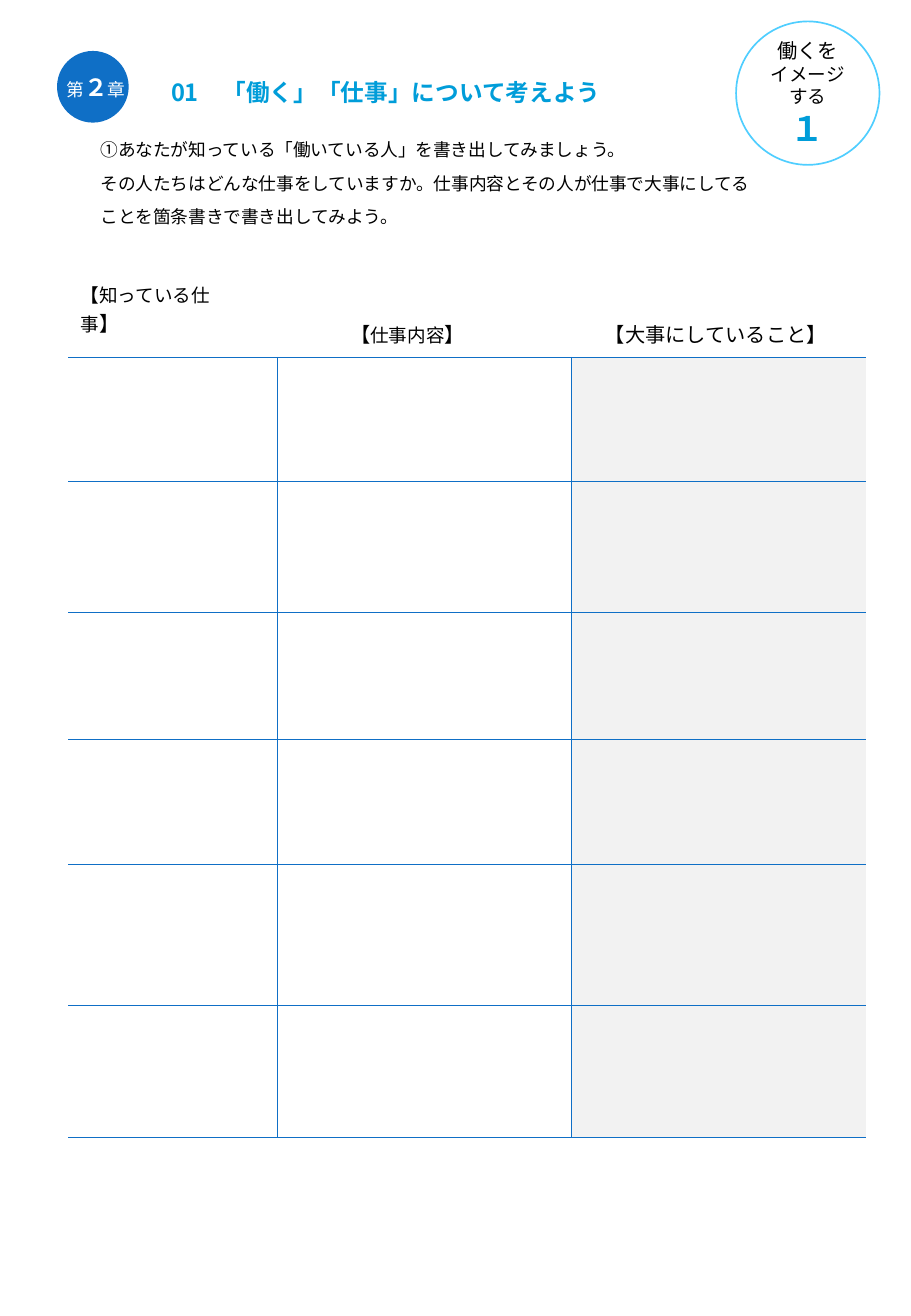
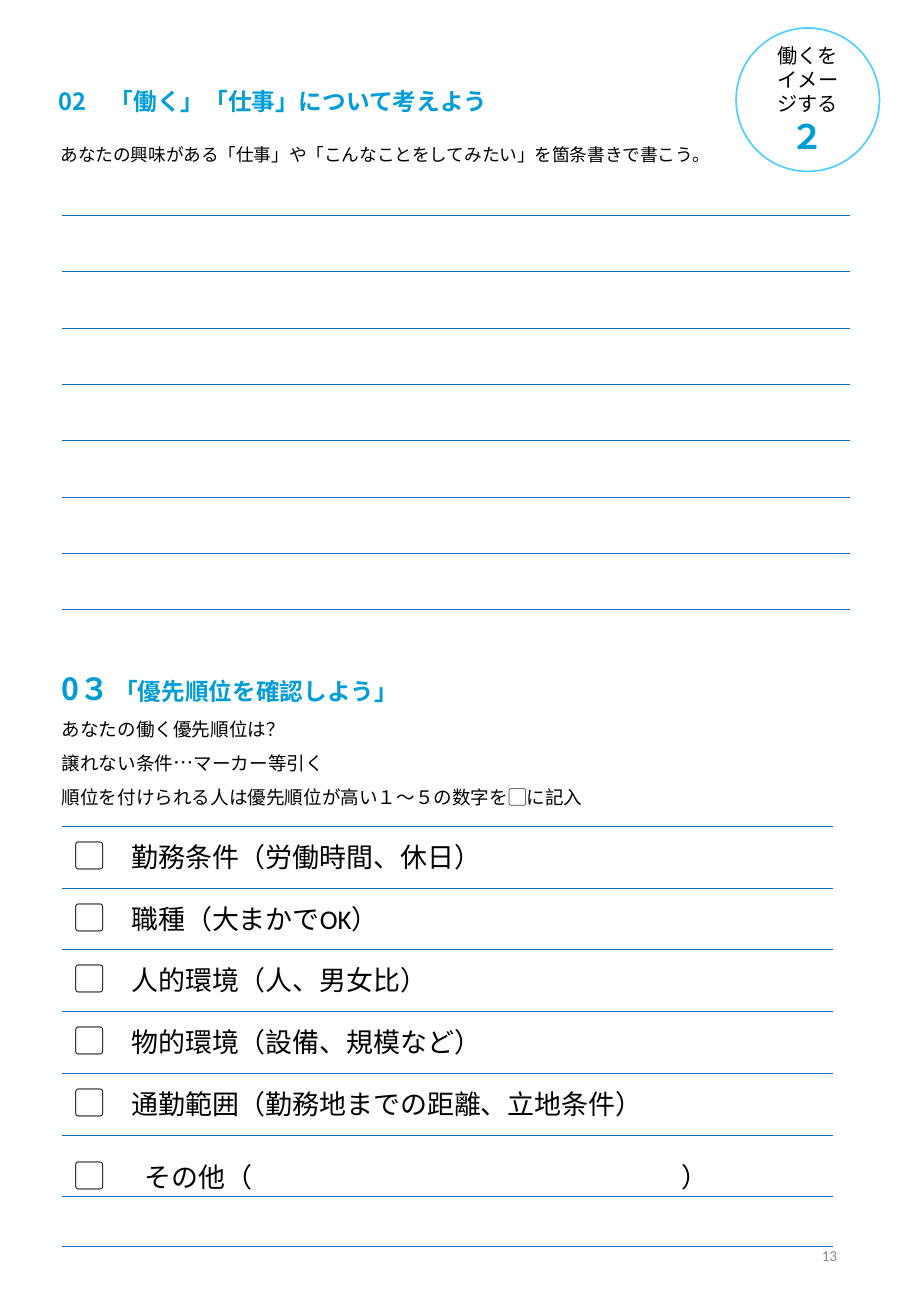
from pptx import Presentation
from pptx.dml.color import RGBColor
from pptx.enum.shapes import MSO_SHAPE
from pptx.enum.text import MSO_ANCHOR, PP_ALIGN
from pptx.oxml import parse_xml
from pptx.oxml.ns import nsdecls, qn
from pptx.util import Pt

BLUE = RGBColor(0x0F, 0x6F, 0xC6)
CYAN = RGBColor(0x00, 0x9D, 0xD9)
SKY = RGBColor(0x4F, 0xCE, 0xFF)
BLACK = RGBColor(0, 0, 0)
WHITE = RGBColor(0xFF, 0xFF, 0xFF)
PALE_GRAY = RGBColor(0xF2, 0xF2, 0xF2)
GRAY = RGBColor(0x8C, 0x8C, 0x8C)

JAPANESE_FONT = "Noto Sans CJK JP"
LATIN_FONT = "Calibri"
PLAIN_TABLE_STYLE = "{2D5ABB26-0587-4C30-8999-92F81FD0307C}"
LEADING = 20
TITLE = "「働く」「仕事」について考えよう"


def run(text, size, color=BLACK, bold=False):
    return text, size, color, bold


class Worksheet:
    def __init__(self):
        self.presentation = Presentation()
        self.presentation.slide_width = Pt(540)
        self.presentation.slide_height = Pt(780)
        self.slide = None

    def new_slide(self):
        self.slide = self.presentation.slides.add_slide(self.presentation.slide_layouts[6])

    def set_text(self, text_frame, paragraphs, leading=None, align=PP_ALIGN.LEFT, font=JAPANESE_FONT):
        """Fill a text frame; each paragraph is a list of runs."""
        for index, runs in enumerate(paragraphs):
            paragraph = text_frame.add_paragraph() if index else text_frame.paragraphs[0]
            paragraph.alignment = align
            if leading:
                paragraph.line_spacing = Pt(leading)
            for text, size, color, bold in runs:
                piece = paragraph.add_run()
                piece.text = text
                piece.font.name = font
                piece.font.size = Pt(size)
                piece.font.bold = bold
                piece.font.color.rgb = color
                piece.font._element.find(qn("a:latin")).addnext(
                    parse_xml(f'<a:ea {nsdecls("a")} typeface="{JAPANESE_FONT}"/>'))

    def text(self, left, top, width, height, paragraphs, anchor=MSO_ANCHOR.TOP, **style):
        box = self.slide.shapes.add_textbox(Pt(left), Pt(top), Pt(width), Pt(height))
        box.text_frame.word_wrap = True
        box.text_frame.vertical_anchor = anchor
        self.set_text(box.text_frame, paragraphs, **style)

    def title(self, left, top, number):
        self.text(left, top, 333, 27, [[run(f"{number}\u3000{TITLE}", 14, CYAN, True)]], leading=LEADING)

    def circle(self, left, top, diameter, fill=None, line=None):
        shape = self.slide.shapes.add_shape(
            MSO_SHAPE.OVAL, Pt(left), Pt(top), Pt(diameter), Pt(diameter))
        shape.shadow.inherit = False
        if fill is None:
            shape.fill.background()
        else:
            shape.fill.solid()
            shape.fill.fore_color.rgb = fill
        if line is None:
            shape.line.fill.background()
        else:
            shape.line.color.rgb = line
            shape.line.width = Pt(1)
        return shape

    def theme_badge(self, top, labels, number):
        """Draw the ring at the top right with the theme and its number."""
        frame = self.circle(436.3, top, 85, line=SKY).text_frame
        frame.word_wrap = True
        frame.vertical_anchor = MSO_ANCHOR.MIDDLE
        paragraphs = [[label] for label in labels] + [[run(number, 20, CYAN, True)]]
        self.set_text(frame, paragraphs, align=PP_ALIGN.CENTER)

    def table(self, left, top, widths, heights, ruled_rows, divided_rows=()):
        """Add a table with a line above each ruled row and a divider after column one."""
        table = self.slide.shapes.add_table(
            len(heights), len(widths), Pt(left), Pt(top), Pt(sum(widths)), Pt(sum(heights))).table
        table.first_row = table.horz_banding = False
        table._tbl.tblPr.find(qn("a:tableStyleId")).text = PLAIN_TABLE_STYLE
        for column, width in zip(table.columns, widths):
            column.width = Pt(width)
        for row_index, height in enumerate(heights):
            table.rows[row_index].height = Pt(height)
            for column_index in range(len(widths)):
                cell = table.cell(row_index, column_index)
                cell.fill.background()
                divided = row_index in divided_rows
                tests = {
                    "L": divided and column_index == 1,
                    "R": divided and column_index == 0,
                    "T": row_index in ruled_rows,
                    "B": row_index + 1 in ruled_rows,
                }
                self.border(cell, [side for side, wanted in tests.items() if wanted])
        return table

    def border(self, cell, sides):
        properties = cell._tc.get_or_add_tcPr()
        for position, side in enumerate(sides):
            properties.insert(position, parse_xml(
                f'<a:ln{side} {nsdecls("a")} w="3175"><a:solidFill>'
                f'<a:srgbClr val="{BLUE}"/></a:solidFill></a:ln{side}>'))

    def tab_stops(self, paragraph, stops):
        marks = "".join(f'<a:tab pos="{Pt(stop)}" algn="l"/>' for stop in stops)
        paragraph._p.get_or_add_pPr().append(
            parse_xml(f'<a:tabLst {nsdecls("a")}>{marks}</a:tabLst>'))


def build_jobs_slide(sheet):
    sheet.new_slide()
    sheet.title(94.3, 39.6, "01")
    sheet.text(52.6, 71.3, 416, 66, [
        [run("①あなたが知っている「働いている人」を書き出してみましょう。", 10.5)],
        [run("その人たちはどんな仕事をしていますか。仕事内容とその人が仕事で大事にしてる\u3000"
             "ことを箇条書きで書き出してみよう。", 10.5)],
    ], leading=LEADING)
    sheet.theme_badge(12.7, [run("働くを", 12), run("イメージする", 11)], "１")

    answer_rows = range(1, 7)
    table = sheet.table(40.6, 162.7, [123.8, 174.4, 174.4],
                        [49, 73.5, 77.6, 75.3, 74.1, 83.6, 78.2, 30.2],
                        ruled_rows=range(1, 8), divided_rows=answer_rows)
    for row in answer_rows:
        fill = table.cell(row, 2).fill
        fill.solid()
        fill.fore_color.rgb = PALE_GRAY
    table.cell(0, 1).merge(table.cell(0, 2))
    table.cell(7, 0).merge(table.cell(7, 2))

    known_jobs, details = table.cell(0, 0), table.cell(0, 1)
    known_jobs.margin_top = 0
    known_jobs.margin_right = Pt(30)
    known_jobs.margin_bottom = Pt(12)
    details.margin_bottom = Pt(5.3)
    for cell in (known_jobs, details):
        cell.vertical_anchor = MSO_ANCHOR.BOTTOM
    sheet.set_text(known_jobs.text_frame,
                   [[run("【", 11, bold=True), run("知っている仕事", 11), run("】", 12)]])
    sheet.set_text(details.text_frame, [[
        run("\t【", 12), run("仕事内容", 11), run("】\t【大事にしていること】", 12)]])
    sheet.tab_stops(details.text_frame.paragraphs[0], [36, 187])

    sheet.circle(33.8, 30.2, 42.5, fill=BLUE)
    sheet.text(32.4, 39.6, 53.3, 24.5, [[
        run("第", 10.5, WHITE), run("２", 14, WHITE, True), run("章", 10.5, WHITE)]])


def build_priorities_slide(sheet):
    sheet.new_slide()
    sheet.title(27.4, 44.6, "02")
    sheet.text(28.8, 74.2, 474.5, 46, [
        [run("あなたの興味がある「仕事」や「こんなことをしてみたい」を箇条書きで書こう。", 10.5)],
    ], leading=LEADING)
    sheet.text(29.5, 395.3, 481, 86.4, [
        [run("0３", 18, CYAN, True), run(" ", 11, CYAN, True),
         run("「優先順位を確認しよう」", 14, CYAN, True)],
        [run("あなたの働く優先順位は？", 11)],
        [run("譲れない条件", 11), run("…", 12), run("マーカー等引く", 11)],
        [run("順位を付けられる人は優先順位が高い１～５の数字を▢に記入", 11)],
    ], leading=LEADING)

    conditions = [
        "勤務条件（労働時間、休日）",
        "職種（大まかでOK）",
        "人的環境（人、男女比）",
        "物的環境（設備、規模など）",
        "通勤範囲（勤務地までの距離、立地条件）",
        "その他（\t）",
    ]
    table = sheet.table(36.7, 489.6, [457.2], [36.6] * 6 + [29.6] * 2, ruled_rows=range(8))
    for row, condition in enumerate(conditions):
        cell = table.cell(row, 0)
        sheet.set_text(cell.text_frame, [[run("▢", 18), run(f"\t{condition}", 16)]], font=LATIN_FONT)
        is_other = row == len(conditions) - 1
        sheet.tab_stops(cell.text_frame.paragraphs[0], [42, 360] if is_other else [34])
        if is_other:
            cell.margin_top = Pt(10.4)
            cell.margin_bottom = 0

    sheet.table(36.7, 127.5, [467.3], [33.4] * 8, ruled_rows=range(8))
    sheet.text(381.6, 722.9, 121.7, 41.8, [[run("13", 9, GRAY)]],
               anchor=MSO_ANCHOR.MIDDLE, align=PP_ALIGN.RIGHT, font=LATIN_FONT)
    sheet.theme_badge(16.6, [run("働くをイメージする", 12)], "２")


def main():
    sheet = Worksheet()
    build_jobs_slide(sheet)
    build_priorities_slide(sheet)
    sheet.presentation.save("out.pptx")


if __name__ == "__main__":
    main()
